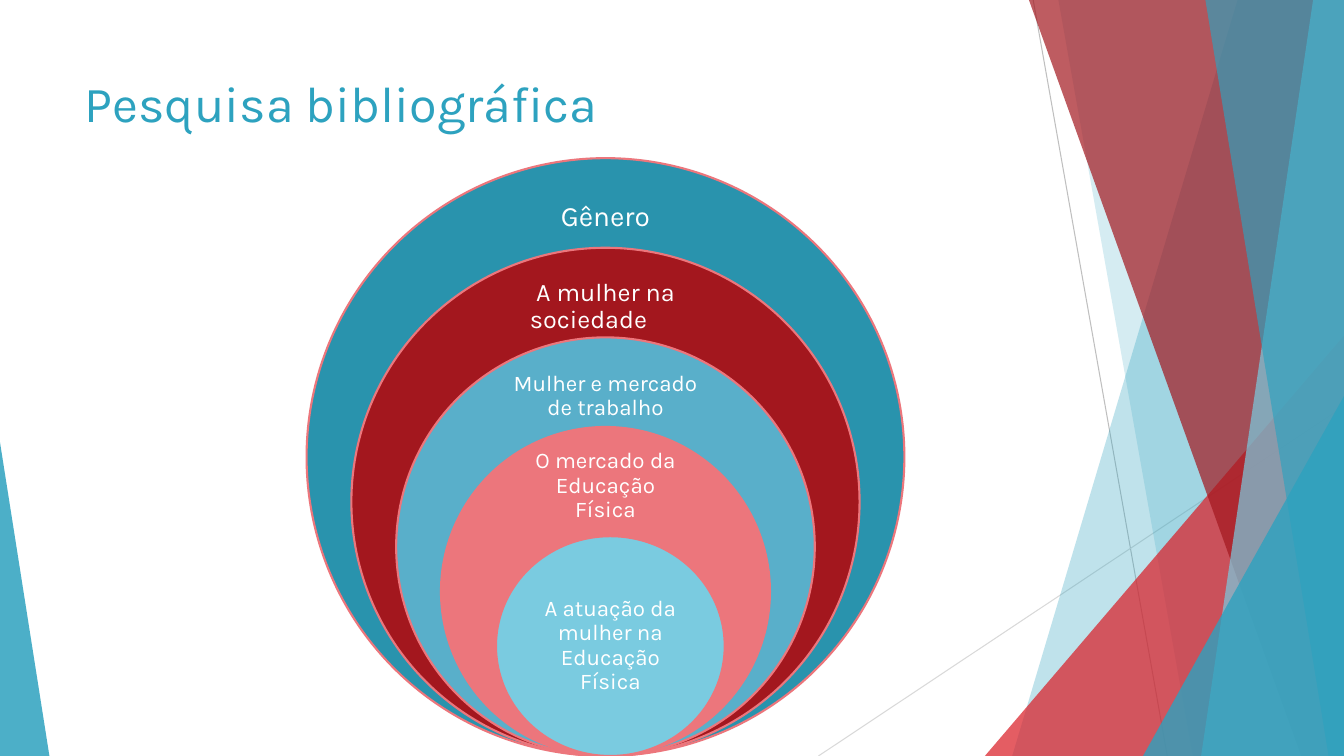
from lxml import etree
from pptx import Presentation
from pptx.dml.color import RGBColor
from pptx.enum.shapes import MSO_CONNECTOR as Connector, MSO_SHAPE as Shape
from pptx.enum.text import MSO_ANCHOR as Anchor, PP_ALIGN as Align
from pptx.oxml.ns import qn
from pptx.util import Pt

WIDTH, HEIGHT = 960, 540
FONT = "Karla"
COLORS = {
    "teal": "2DA2BF", "deep_teal": "2993AD", "blue": "59AFCA", "pale_blue": "7ACBE0",
    "red": "DA1F28", "dark_red": "A3171E", "pink": "EC767C",
    "gray": "BFBFBF", "light_gray": "D9D9D9", "white": "FFFFFF",
}


def color(name):
    """Return the named colour."""
    return RGBColor.from_string(COLORS[name])


def paint(shape, fill, opacity=100, outline=None):
    """Give a shape its fill, opacity and outline."""
    shape.shadow.inherit = False
    shape.fill.solid()
    shape.fill.fore_color.rgb = color(fill)
    if opacity < 100:
        rgb = shape._element.spPr.find(".//" + qn("a:srgbClr"))
        etree.SubElement(rgb, qn("a:alpha"), val=str(opacity * 1000))
    if outline:
        shape.line.color.rgb = color(outline)
        shape.line.width = Pt(1.5)
    else:
        shape.line.fill.background()


def add_line(slide, start, end, stroke):
    """Draw a thin straight line."""
    line = slide.shapes.add_connector(Connector.STRAIGHT, *map(Pt, start + end))
    line.line.color.rgb = color(stroke)
    line.line.width = Pt(0.75)
    etree.SubElement(line._element.spPr, qn("a:effectLst"))


def add_band(slide, top_left, bottom_left, fill, opacity):
    """Draw a band from a slanted left side to the right edge of the slide."""
    builder = slide.shapes.build_freeform(Pt(top_left), 0)
    corners = [(WIDTH, 0), (WIDTH, HEIGHT), (bottom_left, HEIGHT)]
    builder.add_line_segments([(Pt(x), Pt(y)) for x, y in corners], close=True)
    paint(builder.convert_to_shape(), fill, opacity)


def add_corner(slide, left, top, width, apex, fill, opacity):
    """Draw a right triangle standing on the bottom edge of the slide."""
    triangle = slide.shapes.add_shape(
        Shape.ISOSCELES_TRIANGLE, Pt(left), Pt(top), Pt(width), Pt(HEIGHT - top))
    triangle.adjustments[0] = apex
    paint(triangle, fill, opacity)


def add_run(paragraph, text, size, font_color):
    """Add a formatted run."""
    run = paragraph.add_run()
    run.text = text
    run.font.name = FONT
    run.font.size = Pt(size)
    run.font.color.rgb = color(font_color)


def add_circle(slide, center, width, height, fill):
    """Draw an outlined circle resting on the bottom edge of the slide."""
    circle = slide.shapes.add_shape(
        Shape.OVAL, Pt(center - width / 2), Pt(HEIGHT - height), Pt(width), Pt(height))
    paint(circle, fill, outline="pink")


def add_label(slide, center, top, width, height, runs, inset):
    """Write centred white text."""
    box = slide.shapes.add_textbox(Pt(center - width / 2), Pt(top), Pt(width), Pt(height))
    frame = box.text_frame
    frame.word_wrap = True
    frame.vertical_anchor = Anchor.MIDDLE
    frame.margin_left = frame.margin_right = Pt(inset)
    frame.margin_top = frame.margin_bottom = Pt(inset)
    paragraph = frame.paragraphs[0]
    paragraph.alignment = Align.CENTER
    paragraph.line_spacing = 0.9
    for text, size in runs:
        add_run(paragraph, text, size, "white")


def add_title(slide, text):
    """Place and fill the title."""
    title = slide.shapes.title
    title.left, title.top, title.width, title.height = map(Pt, (53.3, 48.2, 676.8, 103.7))
    title.text_frame.vertical_anchor = Anchor.TOP
    paragraph = title.text_frame.paragraphs[0]
    paragraph.alignment = Align.LEFT
    add_run(paragraph, text, 36, "teal")


def add_background(slide):
    """Draw the facets at both sides of the slide."""
    add_line(slide, (738, 0), (833.8, HEIGHT), "gray")
    add_line(slide, (WIDTH, 290.2), (584.6, HEIGHT), "light_gray")
    add_band(slide, 884, 723, "teal", 30)
    add_band(slide, 756, 852, "teal", 20)
    add_corner(slide, 703.5, 239.8, 256.5, 1, "red", 72)
    add_band(slide, 735, 929.5, "dark_red", 70)
    add_band(slide, 938, 858, "pale_blue", 70)
    add_band(slide, 861, 949, "teal", 65)
    add_corner(slide, 816.5, 283, 143.5, 1, "teal", 80)
    add_corner(slide, 0, 316, 35.3, 0, "teal", 85)


def add_nested_circles(slide):
    """Draw the stacked circles, from the widest topic to the narrowest."""
    center, outer, step = 432.5, 427, 64
    rings = [
        ("deep_teal", 160, 11.5, [("Gênero", 20)]),
        ("dark_red", 156, 10, [("A mulher na sociedade", 18), ("\t", 16)]),
        ("blue", 155, 9, [("Mulher e mercado de trabalho", 16)]),
        ("pink", 127, 9, [("O mercado da Educação Física", 16)]),
    ]
    for level, (fill, label_width, inset, runs) in enumerate(rings):
        diameter = outer - level * step
        add_circle(slide, center, diameter, diameter, fill)
        add_label(slide, center, HEIGHT - diameter + 21, label_width, 42, runs, inset)
    core = 436
    add_circle(slide, core, 163.4, 157, "pale_blue")
    add_label(slide, core, 422, 116, 78.5,
              [("A atuação da mulher na Educação Física", 16)], 9)


def main():
    """Build and save the slide."""
    presentation = Presentation()
    presentation.slide_width, presentation.slide_height = Pt(WIDTH), Pt(HEIGHT)
    slide = presentation.slides.add_slide(presentation.slide_layouts[5])
    add_background(slide)
    add_title(slide, "Pesquisa bibliográfica")
    add_nested_circles(slide)
    presentation.save("out.pptx")


if __name__ == "__main__":
    main()
